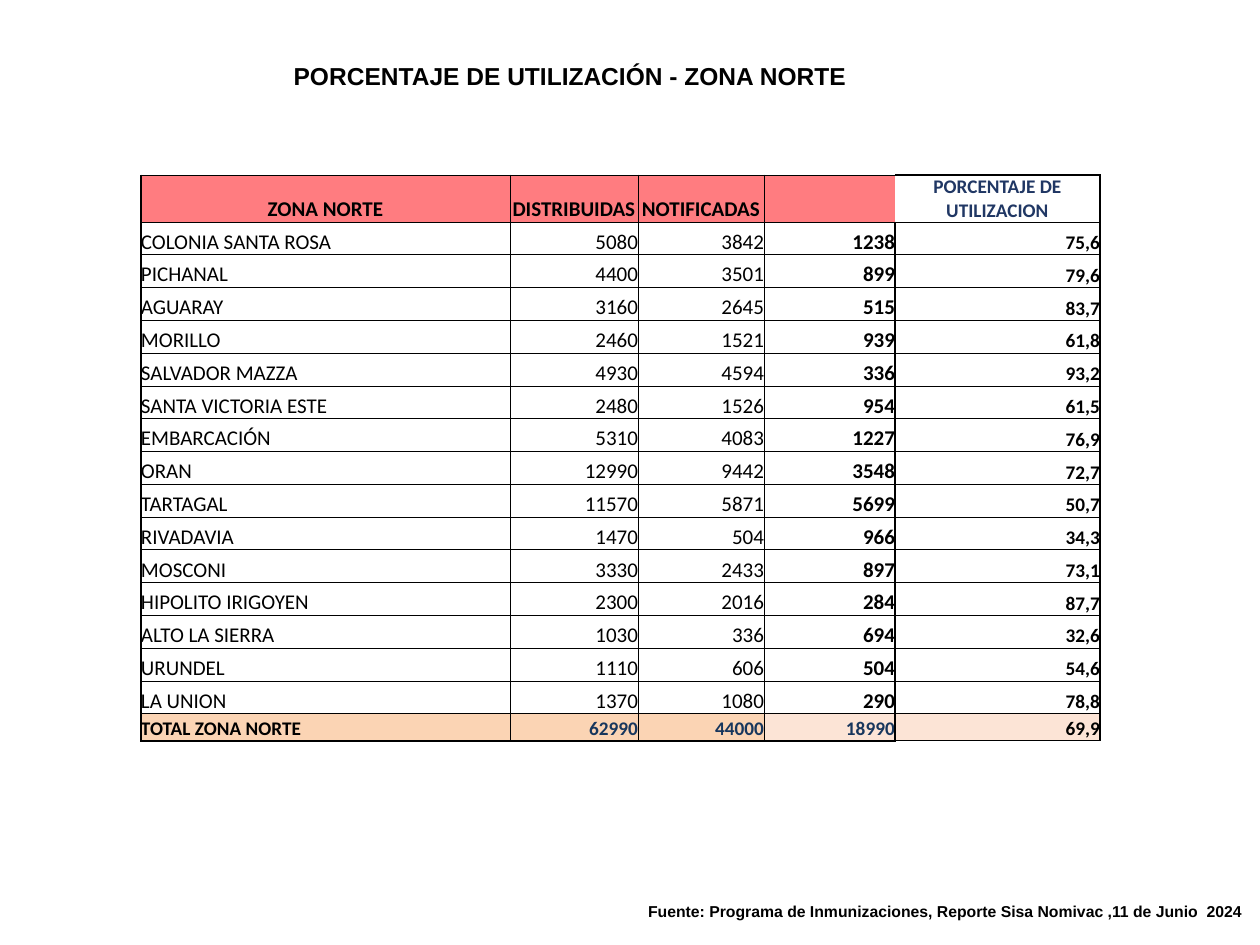
"""Build the slide on vaccine utilisation in the northern zone."""
from dataclasses import dataclass

from lxml import etree
from pptx import Presentation
from pptx.dml.color import RGBColor
from pptx.enum.text import MSO_ANCHOR, MSO_AUTO_SIZE, PP_ALIGN
from pptx.oxml.ns import qn
from pptx.util import Pt

PX = 914400 / 126
LEFT, CENTER, RIGHT = PP_ALIGN.LEFT, PP_ALIGN.CENTER, PP_ALIGN.RIGHT
BOTTOM, MIDDLE = MSO_ANCHOR.BOTTOM, MSO_ANCHOR.MIDDLE
TOP = MSO_ANCHOR.TOP
GROW, FIXED = MSO_AUTO_SIZE.SHAPE_TO_FIT_TEXT, MSO_AUTO_SIZE.NONE
COLORS = {
    "black": "000000",
    "header_blue": "203764",
    "total_blue": "17365D",
    "header": "FF7C80",
    "total": "FBD4B4",
    "total_light": "FCE4D6",
}
MARGINS = ("margin_left", "margin_top", "margin_right", "margin_bottom")
THIN, THICK = 0.5, 1
COLUMN_WIDTHS = (369, 128, 126, 131, 205)
HEADER_HEIGHT, BODY_HEIGHT, TOTAL_HEIGHT = 47, 492, 27
HEADINGS = ("ZONA NORTE", "DISTRIBUIDAS", "NOTIFICADAS", "", "PORCENTAJE DE UTILIZACION")
LOCALITIES = (
    ("COLONIA SANTA ROSA", "5080", "3842", "1238", "75,6"),
    ("PICHANAL", "4400", "3501", "899", "79,6"),
    ("AGUARAY", "3160", "2645", "515", "83,7"),
    ("MORILLO", "2460", "1521", "939", "61,8"),
    ("SALVADOR MAZZA", "4930", "4594", "336", "93,2"),
    ("SANTA VICTORIA ESTE", "2480", "1526", "954", "61,5"),
    ("EMBARCACIÓN", "5310", "4083", "1227", "76,9"),
    ("ORAN", "12990", "9442", "3548", "72,7"),
    ("TARTAGAL", "11570", "5871", "5699", "50,7"),
    ("RIVADAVIA", "1470", "504", "966", "34,3"),
    ("MOSCONI", "3330", "2433", "897", "73,1"),
    ("HIPOLITO IRIGOYEN", "2300", "2016", "284", "87,7"),
    ("ALTO LA SIERRA", "1030", "336", "694", "32,6"),
    ("URUNDEL", "1110", "606", "504", "54,6"),
    ("LA UNION", "1370", "1080", "290", "78,8"),
)
TOTALS = ("TOTAL ZONA NORTE", "62990", "44000", "18990", "69,9")


@dataclass(frozen=True)
class TextStyle:
    size: int
    bold: bool = True
    color: str = "black"
    align: int = RIGHT
    font: str = "Calibri"


@dataclass(frozen=True)
class CellStyle:
    text: TextStyle
    left: float | None = THIN
    right: float | None = THIN
    top: float = THIN
    bottom: float = THIN
    fill: str | None = None
    anchor: int = BOTTOM


@dataclass(frozen=True)
class Caption:
    text: str
    left: int
    top: int
    width: int
    height: int
    style: TextStyle
    auto_size: int


HEADING = TextStyle(12, align=CENTER)
FIGURE = TextStyle(12, bold=False)
TOTAL_FIGURE = TextStyle(11, color="total_blue")
HEADER_STYLES = (
    CellStyle(HEADING, left=THICK, fill="header"),
    CellStyle(HEADING, fill="header"),
    CellStyle(HEADING, fill="header"),
    CellStyle(HEADING, right=None, fill="header"),
    CellStyle(TextStyle(11, color="header_blue", align=CENTER),
              left=None, right=THICK, top=THICK, anchor=MIDDLE),
)
BODY_STYLES = (
    CellStyle(TextStyle(12, bold=False, align=LEFT), left=THICK),
    CellStyle(FIGURE),
    CellStyle(FIGURE),
    CellStyle(TextStyle(12), right=THICK),
    CellStyle(TextStyle(11), left=THICK, right=THICK),
)
TOTAL_STYLES = (
    CellStyle(TextStyle(11, align=LEFT), left=THICK, bottom=THICK, fill="total"),
    CellStyle(TOTAL_FIGURE, bottom=THICK, fill="total"),
    CellStyle(TOTAL_FIGURE, bottom=THICK, fill="total"),
    CellStyle(TOTAL_FIGURE, right=THICK, bottom=THICK, fill="total_light"),
    CellStyle(TextStyle(11), left=THICK, right=THICK, fill="total_light"),
)
CAPTIONS = (
    Caption("PORCENTAJE DE UTILIZACIÓN - ZONA NORTE", 203, 55, 734, 50,
            TextStyle(14, align=CENTER, font="Arial"), GROW),
    Caption("Fuente: Programa de Inmunizaciones, Reporte Sisa Nomivac ,11 de Junio  2024",
            621, 896, 633, 36, TextStyle(9, font="Arial"), FIXED),
)


def px(length: int) -> int:
    return round(length * PX)


def write_text(frame, text: str, style: TextStyle) -> None:
    para = frame.paragraphs[0]
    para.alignment = style.align
    if not text:
        return
    span = para.add_run()
    span.text = text
    formats = {"size": Pt(style.size), "bold": style.bold, "name": style.font}
    for name, value in formats.items():
        setattr(span.font, name, value)
    span.font.color.rgb = RGBColor.from_string(COLORS[style.color])


def add_caption(page, caption: Caption) -> None:
    box = page.shapes.add_textbox(
        px(caption.left), px(caption.top), px(caption.width), px(caption.height))
    formats = {"word_wrap": True, "auto_size": caption.auto_size, "vertical_anchor": TOP}
    for name, value in formats.items():
        setattr(box.text_frame, name, value)
    write_text(box.text_frame, caption.text, caption.style)


def draw_borders(cell, style: CellStyle) -> None:
    properties = cell._tc.get_or_add_tcPr()
    sides = {"a:lnL": style.left, "a:lnR": style.right,
             "a:lnT": style.top, "a:lnB": style.bottom}
    for tag, weight in sides.items():
        line = etree.SubElement(properties, qn(tag), w=str(Pt(weight or 0)))
        if weight is None:
            etree.SubElement(line, qn("a:noFill"))
        else:
            fill = etree.SubElement(line, qn("a:solidFill"))
            etree.SubElement(fill, qn("a:srgbClr"), val=COLORS["black"])


def fill_cell(cell, text: str, style: CellStyle) -> None:
    formats = {"vertical_anchor": style.anchor, **dict.fromkeys(MARGINS, 0)}
    for name, value in formats.items():
        setattr(cell, name, value)
    draw_borders(cell, style)
    if style.fill:
        cell.fill.solid()
        cell.fill.fore_color.rgb = RGBColor.from_string(COLORS[style.fill])
    else:
        cell.fill.background()
    write_text(cell.text_frame, text, style.text)


def add_usage_table(page) -> None:
    body_row = px(BODY_HEIGHT) // len(LOCALITIES)
    rows = [
        (px(HEADER_HEIGHT), HEADINGS, HEADER_STYLES),
        *((body_row, locality, BODY_STYLES) for locality in LOCALITIES),
        (px(TOTAL_HEIGHT), TOTALS, TOTAL_STYLES),
    ]
    height = HEADER_HEIGHT + BODY_HEIGHT + TOTAL_HEIGHT
    table = page.shapes.add_table(
        len(rows), len(COLUMN_WIDTHS),
        px(141), px(175), px(sum(COLUMN_WIDTHS)), px(height)).table
    for name in ("first_row", "horz_banding"):
        setattr(table, name, False)
    for column, width in zip(table.columns, COLUMN_WIDTHS):
        column.width = px(width)
    for row, (row_height, texts, styles) in zip(table.rows, rows):
        row.height = row_height
        for cell, text, style in zip(row.cells, texts, styles):
            fill_cell(cell, text, style)


def main() -> None:
    deck = Presentation()
    deck.slide_width, deck.slide_height = px(1260), px(945)
    page = deck.slides.add_slide(deck.slide_layouts[6])
    for caption in CAPTIONS:
        add_caption(page, caption)
    add_usage_table(page)
    deck.save("out.pptx")


if __name__ == "__main__":
    main()
